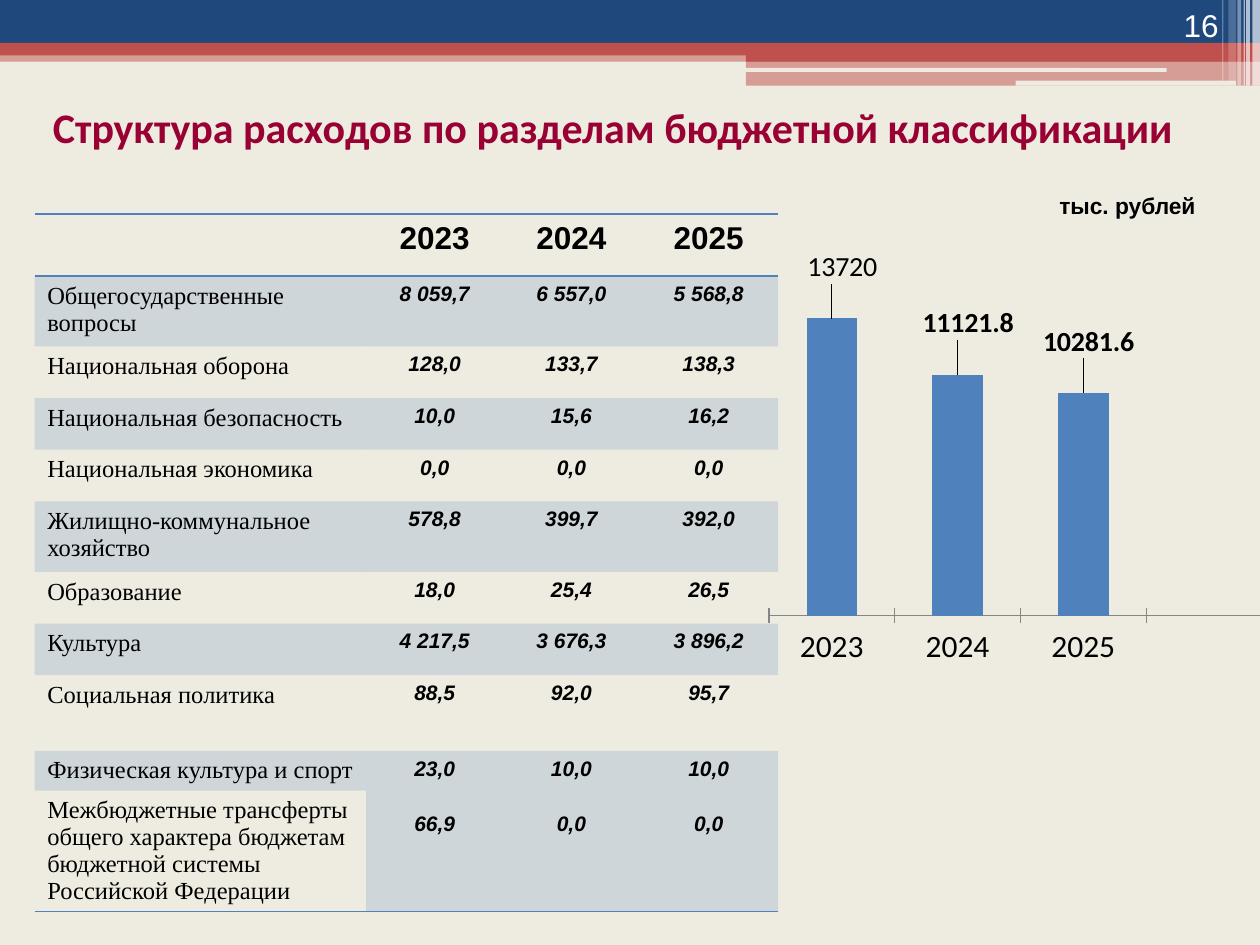
from lxml.etree import SubElement
from pptx import Presentation
from pptx.chart.data import CategoryChartData
from pptx.dml.color import RGBColor
from pptx.enum.chart import XL_CHART_TYPE, XL_LABEL_POSITION, XL_TICK_MARK
from pptx.enum.shapes import MSO_SHAPE
from pptx.enum.text import MSO_ANCHOR, PP_ALIGN
from pptx.oxml import parse_xml
from pptx.oxml.ns import nsdecls, qn
from pptx.util import Inches, Pt

THEME = {
    "paper": "EEECE1", "navy": "1F497D", "red": "C0504D", "blue": "4F81BD",
    "white": "FFFFFF", "black": "000000", "title": "990033", "axis": "868686",
    "sans": "Arial", "serif": "Times New Roman", "heading": "Calibri",
    "title_size": 24, "large": 18, "label": 16, "row": 14, "unit": 13, "value": 12,
}

presentation = Presentation()
presentation.slide_width, presentation.slide_height = Inches(10), Inches(7.5)
COLUMN = presentation.slide_width / 100  # grid of 100 columns by 75 rows
ROW = presentation.slide_height / 75
slide = presentation.slides.add_slide(presentation.slide_layouts[6])
slide.background.fill.solid()
slide.background.fill.fore_color.rgb = RGBColor.from_string(THEME["paper"])


def paint(fill, color, opacity=100):
    """Solid fill with an opacity in percent."""
    fill.solid()
    fill.fore_color.rgb = RGBColor.from_string(THEME[color])
    if opacity < 100:
        choice = fill._xPr.find(qn("a:solidFill"))[0]
        SubElement(choice, qn("a:alpha"), val=str(opacity * 1000))


def style(paragraph, text, size, face, color="black", bold=False, italic=False,
          align=PP_ALIGN.LEFT):
    paragraph.text, paragraph.alignment = text, align
    font = paragraph.font
    font.size, font.name = Pt(THEME[size]), THEME[face]
    font.bold, font.italic = bold, italic
    font.color.rgb = RGBColor.from_string(THEME[color])


# Header bands and the vertical light stripes: left, top, width, height in grid units
RECT, ROUND = MSO_SHAPE.RECTANGLE, MSO_SHAPE.ROUNDED_RECTANGLE
bands = [
    (RECT, 0, 4, 100, 0.9, "red", 50),
    (RECT, 0, 0, 100, 3.4, "navy", 100),
    (RECT, 0, 3.4, 100, 1, "red", 100),
    (RECT, 59.2, 3.9, 40.8, 1, "red", 100),
    (RECT, 59.2, 4.8, 40.8, 2, "red", 50),
    (ROUND, 59.1, 5.4, 33.5, 0.3, "paper", 100),
    (ROUND, 80.6, 6.4, 17.5, 0.4, "paper", 100),
]
stripes = [(99.4, 0.6, 6.8, 65), (98.9, 0.3, 6.8, 65), (98.7, 0.1, 6.8, 60),
           (98.2, 0.3, 6.8, 40), (97.5, 0.6, 6.4, 20), (97, 0.1, 6.4, 30)]
bands += [(RECT, left, 0, width, height, "white", opacity)
          for left, width, height, opacity in stripes]
for kind, left, top, width, height, color, opacity in bands:
    shape = slide.shapes.add_shape(kind, int(left * COLUMN), int(top * ROW),
                                   int(width * COLUMN), int(height * ROW))
    shape.shadow.inherit = False
    shape.line.fill.background()
    paint(shape.fill, color, opacity)

# Expenditure table
years = ["2023", "2024", "2025"]
expenses = [
    ("Общегосударственные вопросы", "8 059,7", "6 557,0", "5 568,8"),
    ("Национальная оборона", "128,0", "133,7", "138,3"),
    ("Национальная безопасность", "10,0", "15,6", "16,2"),
    ("Национальная экономика", "0,0", "0,0", "0,0"),
    ("Жилищно-коммунальное хозяйство", "578,8", "399,7", "392,0"),
    ("Образование", "18,0", "25,4", "26,5"),
    ("Культура", "4 217,5", "3 676,3", "3 896,2"),
    ("Социальная политика", "88,5", "92,0", "95,7"),
    ("Физическая культура и спорт", "23,0", "10,0", "10,0"),
    ("Межбюджетные трансферты общего характера бюджетам бюджетной системы "
     "Российской Федерации", "66,9", "0,0", "0,0"),
]
column_widths = [26.3, 10.9, 10.8, 11.0]
row_heights = [4.9, 5.6, 4.1, 4.1, 4.1, 5.6, 4.1, 4.1, 6, 3.1, 9.6]
last = len(expenses)
frame = slide.shapes.add_table(last + 1, 4, int(2.75 * COLUMN), int(17 * ROW),
                               int(sum(column_widths) * COLUMN),
                               int(sum(row_heights) * ROW))
table = frame.table
table.horz_banding = table.first_row = False
table._tbl.tblPr.find(qn("a:tableStyleId")).text = "{2D5ABB26-0587-4C30-8999-92F81FD0307C}"
for index, width in enumerate(column_widths):
    table.columns[index].width = int(width * COLUMN)
for index, height in enumerate(row_heights):
    table.rows[index].height = int(height * ROW)

# The values of the last two rows share one cell per year
for column in range(1, 4):
    table.cell(last - 1, column).merge(table.cell(last, column))

for row, texts in enumerate([("", *years), *expenses]):
    for column, text in enumerate(texts):
        cell = table.cell(row, column)
        if row % 2 and not cell.is_spanned:
            paint(cell.fill, "blue", 20)
        else:
            cell.fill.background()
        paragraph = cell.text_frame.paragraphs[0]
        if cell.is_spanned:
            paragraph = table.cell(last - 1, column).text_frame.add_paragraph()
            paragraph.space_before = Pt(18)
        if row == 0:
            style(paragraph, text, "large", "sans", bold=True, align=PP_ALIGN.CENTER)
        elif column == 0:
            style(paragraph, text, "row", "serif")
        else:
            style(paragraph, text, "value", "sans", bold=True, italic=True,
                  align=PP_ALIGN.CENTER)
        # Rules above and below the header and under the table
        edges = {0: ["lnT", "lnB"], last: ["lnB"]}.get(row, [])
        if cell.is_merge_origin:
            edges = ["lnB"]
        for position, edge in enumerate(edges):
            cell._tc.get_or_add_tcPr().insert(position, parse_xml(
                f'<a:{edge} {nsdecls("a")} w="12700"><a:solidFill>'
                f'<a:srgbClr val="{THEME["blue"]}"/></a:solidFill></a:{edge}>'))

# Title, page number and unit
captions = [
    (0, 7.6, 97.3, 5.1, "Структура расходов по разделам бюджетной классификации",
     "title_size", "heading", "title", True, PP_ALIGN.CENTER, MSO_ANCHOR.TOP),
    (89.4, 0, 8.3, 4, "16", "large", "sans", "white", False, PP_ALIGN.RIGHT,
     MSO_ANCHOR.BOTTOM),
    (83.1, 14.7, 15, 3.2, "тыс. рублей", "unit", "sans", "black", True, PP_ALIGN.LEFT,
     MSO_ANCHOR.TOP),
]
for left, top, width, height, text, size, face, color, bold, align, anchor in captions:
    box = slide.shapes.add_textbox(int(left * COLUMN), int(top * ROW),
                                   int(width * COLUMN), int(height * ROW))
    box.text_frame.word_wrap = True
    box.text_frame.vertical_anchor = anchor
    style(box.text_frame.paragraphs[0], text, size, face, color, bold, align=align)

# Column chart of yearly totals, with an empty fourth category
chart_data = CategoryChartData()
chart_data.categories = [*years, ""]
chart_data.add_series("Series 1", [13720, 11121.8, 10281.6, None])
chart = slide.shapes.add_chart(
    XL_CHART_TYPE.COLUMN_CLUSTERED, int(60.2 * COLUMN), int(19.9 * ROW),
    int(41.6 * COLUMN), int(33.6 * ROW), chart_data).chart
chart.has_legend = chart.has_title = False
chart.font.size, chart.font.name = Pt(THEME["large"]), THEME["heading"]
chart.font.color.rgb = RGBColor.from_string(THEME["black"])
chart.value_axis.visible = chart.value_axis.has_major_gridlines = False
chart.value_axis.minimum_scale, chart.value_axis.maximum_scale = 0, 16000
chart.value_axis.tick_labels.number_format = "0.0"
chart.value_axis.tick_labels.number_format_is_linked = False
chart.category_axis.major_tick_mark = XL_TICK_MARK.CROSS
chart.category_axis.format.line.color.rgb = RGBColor.from_string(THEME["axis"])
plot = chart.plots[0]
plot.gap_width, plot.vary_by_categories = 150, False
series = plot.series[0]
paint(series.format.fill, "blue")

# Plot area as shares of the chart
plot_area = chart._chartSpace.chart.plotArea
for old_layout in plot_area.findall(qn("c:layout")):
    plot_area.remove(old_layout)
plot_area.insert(0, parse_xml(
    f'<c:layout {nsdecls("c")}><c:manualLayout><c:layoutTarget val="inner"/>'
    '<c:xMode val="edge"/><c:yMode val="edge"/><c:x val="0.02"/><c:y val="0.03"/>'
    '<c:w val="0.96"/><c:h val="0.83"/></c:manualLayout></c:layout>'))

# Value labels, lifted above the bars
for index, (shift, bold) in enumerate([(0.02, False), (0.02, True), (0.01, True)]):
    label = series.points[index].data_label
    label.position = XL_LABEL_POSITION.OUTSIDE_END
    label.font.size, label.font.name = Pt(THEME["label"]), THEME["heading"]
    label.font.bold = bold
    label.font.color.rgb = RGBColor.from_string(THEME["black"])
    label._get_or_add_dLbl().insert(1, parse_xml(
        f'<c:layout {nsdecls("c")}><c:manualLayout><c:x val="{shift}"/>'
        '<c:y val="-0.07"/></c:manualLayout></c:layout>'))

presentation.save("out.pptx")
